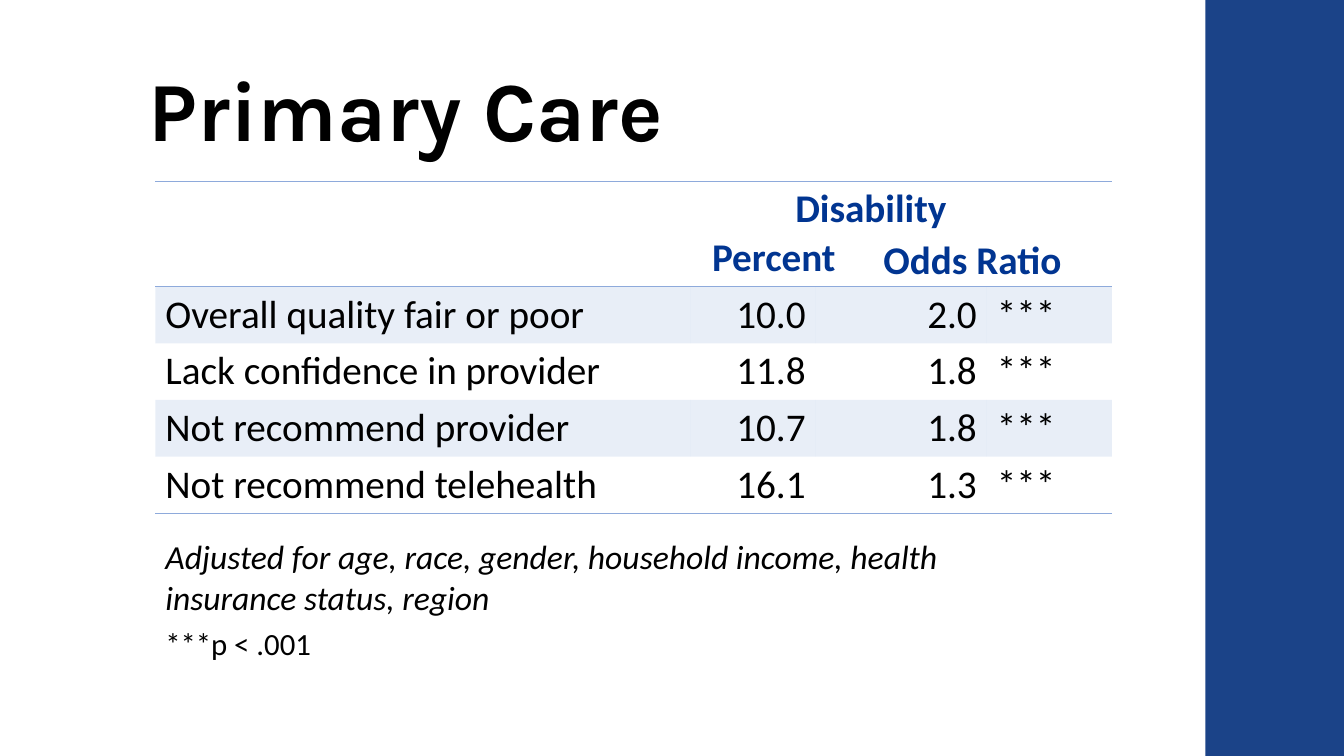
from dataclasses import dataclass
from typing import NamedTuple

from lxml import etree
from pptx import Presentation, util as u
from pptx.dml.color import RGBColor
from pptx.enum import shapes, text
from pptx.oxml import ns

PX = 9525  # EMU per px, slide of 1280 x 720 px


@dataclass(frozen=True)
class Theme:
    bar: str = "1B4388"
    ink: str = "000000"
    head: str = "013591"
    rule: str = "8EAADB"
    tint: int = 20  # percent of the rule colour in a band
    big: int = 60
    body: int = 28
    note: int = 24
    small: int = 22
    face: str = "Calibri"
    show: str = "Karla"


class Box(NamedTuple):
    x: int
    y: int
    w: int
    h: int

    def emu(self) -> list[int]:
        return [v * PX for v in self]


class Label(NamedTuple):
    box: Box
    words: str
    form: dict


class Line(NamedTuple):
    name: str
    pct: str
    odds: str
    stars: str = "***"


T = Theme()
LEFT = 148
COLS = (510, 119, 39, 124, 119)
HEAD, ROW = 100, 54
RULES = (0, 1, 5)  # row edges that carry a line
HEADING = {"color": T.head, "bold": True}

LINES = (
    Line("Overall quality fair or poor", "10.0", "2.0"),
    Line("Lack confidence in provider", "11.8", "1.8"),
    Line("Not recommend provider", "10.7", "1.8"),
    Line("Not recommend telehealth", "16.1", "1.3"),
)

LABELS = (
    Label(Box(132, 41, 1003, 116), "Primary Care",
          {"size": T.big, "face": T.show, "bold": True, "lead": 0.9,
           "anchor": text.MSO_ANCHOR.BOTTOM}),
    Label(Box(748, 170, 227, 55), "Disability", HEADING),
    Label(Box(832, 219, 227, 55), "Odds Ratio", HEADING),
    Label(Box(LEFT, 506, 774, 87),
          "Adjusted for age, race, gender, household income, "
          "health insurance status, region",
          {"size": T.note, "italic": True}),
    Label(Box(LEFT, 590, 193, 45), "***p < .001", {"size": T.small}),
)


def write(frame, words: str, *, size: int = T.body, face: str = T.face,
          color: str = T.ink, bold: bool = False, italic: bool = False,
          align=text.PP_ALIGN.LEFT, lead: float | None = None,
          anchor=text.MSO_ANCHOR.TOP) -> None:
    frame.word_wrap = True
    frame.vertical_anchor = anchor
    para = frame.paragraphs[0]
    para.alignment = align
    para.line_spacing = lead
    run = para.add_run()
    run.text = words
    font = run.font
    font.size, font.name = u.Pt(size), face
    font.bold, font.italic = bold, italic
    font.color.rgb = RGBColor.from_string(color)


def sub(node, tag: str, **attrs: str):
    return etree.SubElement(node, ns.qn(tag), **attrs)


def dress(cell, row: int) -> None:
    """Set the band, margins and edge lines of one cell."""
    cell.margin_top = cell.margin_bottom = 4 * PX
    props = cell._tc.get_or_add_tcPr()
    ruled = {"T": row in RULES, "B": row + 1 in RULES}
    for side in "LRTB":
        edge = sub(props, f"a:ln{side}", w=str(u.Pt(1)))
        if ruled.get(side):
            sub(sub(edge, "a:solidFill"), "a:srgbClr", val=T.rule)
        else:
            sub(edge, "a:noFill")
    if row % 2:
        cell.fill.solid()
        cell.fill.fore_color.rgb = RGBColor.from_string(T.rule)
        tone = props.find(ns.qn("a:solidFill")).find(ns.qn("a:srgbClr"))
        sub(tone, "a:alpha", val=str(T.tint * 1000))
    else:
        cell.fill.background()


def draw_grid(slide) -> None:
    count = len(LINES) + 1
    box = Box(LEFT, 173, sum(COLS), HEAD + ROW * len(LINES))
    grid = slide.shapes.add_table(count, len(COLS), *box.emu()).table
    grid.first_row = grid.horz_banding = False
    for col, wide in zip(grid.columns, COLS):
        col.width = wide * PX
    for i, row in enumerate(grid.rows):
        row.height = (ROW if i else HEAD) * PX
        for cell in row.cells:
            dress(cell, i)

    # Header spans
    for col in (1, 3):
        grid.cell(0, col).merge(grid.cell(0, col + 1))
    write(grid.cell(0, 1).text_frame, "Percent", **HEADING,
          align=text.PP_ALIGN.CENTER)
    grid.cell(0, 1).vertical_anchor = text.MSO_ANCHOR.BOTTOM

    # Body rows
    left, right = text.PP_ALIGN.LEFT, text.PP_ALIGN.RIGHT
    for i, line in enumerate(LINES, 1):
        grid.cell(i, 2).merge(grid.cell(i, 3))
        for col, words, align in zip((0, 1, 2, 4), line,
                                     (left, right, right, left)):
            write(grid.cell(i, col).text_frame, words, align=align)


def draw_bar(slide, box: Box) -> None:
    bar = slide.shapes.add_shape(shapes.MSO_SHAPE.RECTANGLE, *box.emu())
    bar.shadow.inherit = False
    bar.fill.solid()
    bar.fill.fore_color.rgb = RGBColor.from_string(T.bar)
    bar.line.fill.background()


def main() -> None:
    deck = Presentation()
    deck.slide_width, deck.slide_height = 1280 * PX, 720 * PX
    slide = deck.slides.add_slide(deck.slide_layouts[6])
    draw_bar(slide, Box(1148, 0, 132, 720))
    draw_grid(slide)
    # Title, column heads and notes
    for box, words, form in LABELS:
        write(slide.shapes.add_textbox(*box.emu()).text_frame, words, **form)
    deck.save("out.pptx")


if __name__ == "__main__":
    main()
